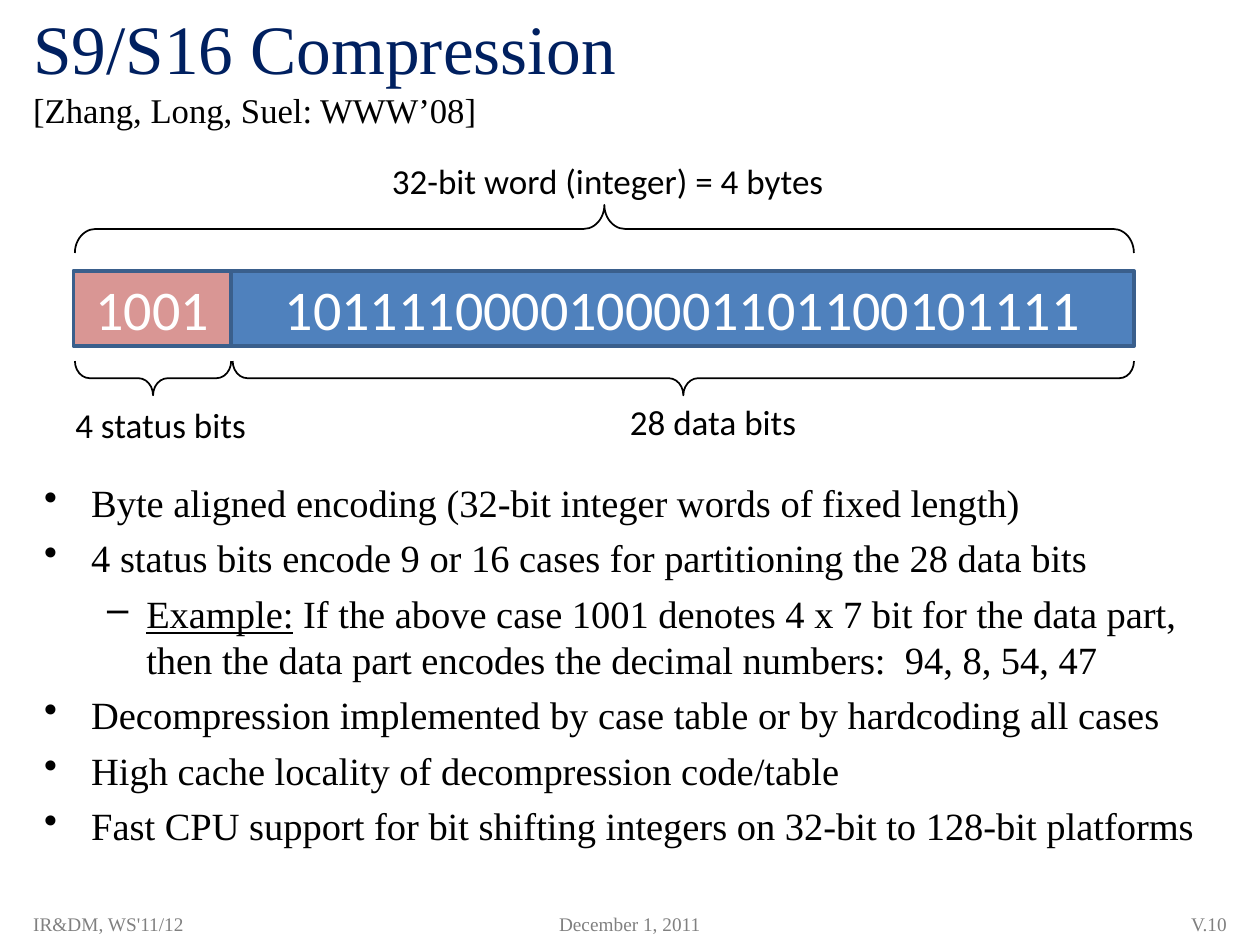
import collections

import pptx
import pptx.dml.color
import pptx.enum.shapes
import pptx.enum.text
import pptx.oxml
import pptx.util

Cm = pptx.util.Cm
Pt = pptx.util.Pt
RGBColor = pptx.dml.color.RGBColor
Align = pptx.enum.text.PP_ALIGN
Anchor = pptx.enum.text.MSO_ANCHOR
Preset = pptx.enum.shapes.MSO_SHAPE

Box = collections.namedtuple("Box", "left top width height")

NAVY = RGBColor(0x00, 0x20, 0x60)
BLACK = RGBColor(0x00, 0x00, 0x00)
GRAY = RGBColor(0x80, 0x80, 0x80)
WHITE = RGBColor(0xFF, 0xFF, 0xFF)
BLUE = RGBColor(0x4F, 0x81, 0xBD)
PINK = RGBColor(0xD9, 0x96, 0x94)
EDGE = RGBColor(0x3A, 0x5F, 0x8C)

SERIF = "Times New Roman"
SANS = "Calibri"

POINTS = [
    (0, [("Byte aligned encoding (32-bit integer words of fixed length)", False)]),
    (0, [("4 status bits encode 9 or 16 cases for partitioning the 28 data bits", False)]),
    (1, [("Example:", True),
         (" If the above case 1001 denotes 4 x 7 bit for the data part, then the data part "
          "encodes the decimal numbers:  94, 8, 54, 47", False)]),
    (0, [("Decompression implemented by case table or by hardcoding all cases", False)]),
    (0, [("High cache locality of decompression code/table", False)]),
    (0, [("Fast CPU support for bit shifting integers on 32-bit to 128-bit platforms", False)]),
]
LEVELS = [("•", 0.95, 0.95), ("–", 2.06, 0.79)]


def add_span(para, text, font, size, color):
    """Append one styled run to a paragraph and return it."""
    span = para.add_run()
    span.text = text
    span.font.name = font
    span.font.size = Pt(size)
    span.font.color.rgb = color
    return span


def add_text_frame(page, box, anchor=Anchor.TOP, wrap=True):
    """Add a text box and return its frame."""
    frame = page.shapes.add_textbox(*map(Cm, box)).text_frame
    frame.word_wrap = wrap
    frame.vertical_anchor = anchor
    return frame


def add_title(page, box):
    """Place the heading with its citation line."""
    para = add_text_frame(page, box, Anchor.MIDDLE).paragraphs[0]
    add_span(para, "S9/S16 Compression", SERIF, 39.6, NAVY)
    para.add_line_break()
    add_span(para, "[Zhang, Long, Suel: WWW’08]", SERIF, 19.8, BLACK)


def add_bit_field(page, box, bits, fill):
    """Draw one filled field of the word with its bits."""
    field = page.shapes.add_shape(Preset.RECTANGLE, *map(Cm, box))
    field.shadow.inherit = False
    field.fill.solid()
    field.fill.fore_color.rgb = fill
    field.line.color.rgb = EDGE
    field.line.width = Pt(2)
    frame = field.text_frame
    frame.word_wrap = True
    frame.vertical_anchor = Anchor.MIDDLE
    para = frame.paragraphs[0]
    para.alignment = Align.CENTER
    add_span(para, bits, SANS, 32, WHITE)


def add_brace(page, box, rotation):
    """Draw a brace turned to lie across the given box."""
    left = box.left + (box.width - box.height) / 2
    top = box.top + (box.height - box.width) / 2
    brace = page.shapes.add_shape(
        Preset.RIGHT_BRACE, Cm(left), Cm(top), Cm(box.height), Cm(box.width))
    brace.rotation = rotation
    brace.adjustments[0] = 0.43
    brace.adjustments[1] = 0.5
    brace.shadow.inherit = False
    brace.fill.background()
    brace.line.color.rgb = BLACK
    brace.line.width = Pt(1)


def add_word_diagram(page, box):
    """Draw the 32-bit word with its braces and labels."""
    status, gap, height = 3.18, 0.03, 1.52
    data = box.width - status
    word_top = box.top + 2.36
    data_left = box.left + status
    add_bit_field(page, Box(data_left, word_top, data, height),
                  "1011110000100001101100101111", BLUE)
    add_bit_field(page, Box(box.left, word_top, status, height), "1001", PINK)

    low = box.top + 4.18
    add_brace(page, Box(box.left + gap, low, status - gap, 0.69), 90)
    add_brace(page, Box(data_left + gap, low, data - gap, 0.69), 90)
    add_brace(page, Box(box.left + gap, box.top + 1.03, box.width - gap, 0.97), 270)

    labels = [("32-bit word (integer) = 4 bytes", 6.17, 0, 9.3),
              ("4 status bits", -0.21, 4.9, 3.99),
              ("28 data bits", 10.97, 4.85, 3.91)]
    for text, left, top, width in labels:
        spot = Box(box.left + left, box.top + top, width, 1.12)
        frame = add_text_frame(page, spot, wrap=False)
        add_span(frame.paragraphs[0], text, SANS, 20, BLACK)


def add_points(page, box):
    """Place the bulleted list."""
    frame = add_text_frame(page, box)
    for index, (level, spans) in enumerate(POINTS):
        para = frame.add_paragraph() if index else frame.paragraphs[0]
        para.level = level
        para.space_before = Pt(5.3)
        mark, margin, hanging = LEVELS[level]
        props = para._p.get_or_add_pPr()
        props.set("marL", str(Cm(margin)))
        props.set("indent", str(-Cm(hanging)))
        bullet = pptx.oxml.parse_xml(
            '<a:buChar xmlns:a="http://schemas.openxmlformats.org/drawingml/2006/main" '
            f'char="{mark}"/>')
        props.append(bullet)
        for text, underlined in spans:
            span = add_span(para, text, SERIF, 22, BLACK)
            if underlined:
                span.font.underline = True


def add_footer(page, box):
    """Place the course, date and page number along the bottom."""
    parts = [("IR&DM, WS'11/12", 0, 7.62, Align.LEFT),
             ("December 1, 2011", 9.31, 5.93, Align.CENTER),
             ("V.10", box.width - 5.5, 5.5, Align.RIGHT)]
    for text, left, width, alignment in parts:
        spot = Box(box.left + left, box.top, width, box.height)
        para = add_text_frame(page, spot, Anchor.MIDDLE).paragraphs[0]
        para.alignment = alignment
        add_span(para, text, SERIF, 11, GRAY)


def main():
    """Build and save the deck."""
    deck = pptx.Presentation()
    deck.slide_width = Cm(25.4)
    deck.slide_height = Cm(19.05)
    page = deck.slides.add_slide(deck.slide_layouts[6])
    add_title(page, Box(0.42, 0.42, 24.56, 1.9))
    add_points(page, Box(0.64, 9.53, 23.92, 7.83))
    add_footer(page, Box(0.42, 18.2, 24.56, 0.85))
    add_word_diagram(page, Box(1.48, 3.1, 21.38, 6.02))
    deck.save("out.pptx")


if __name__ == "__main__":
    main()
